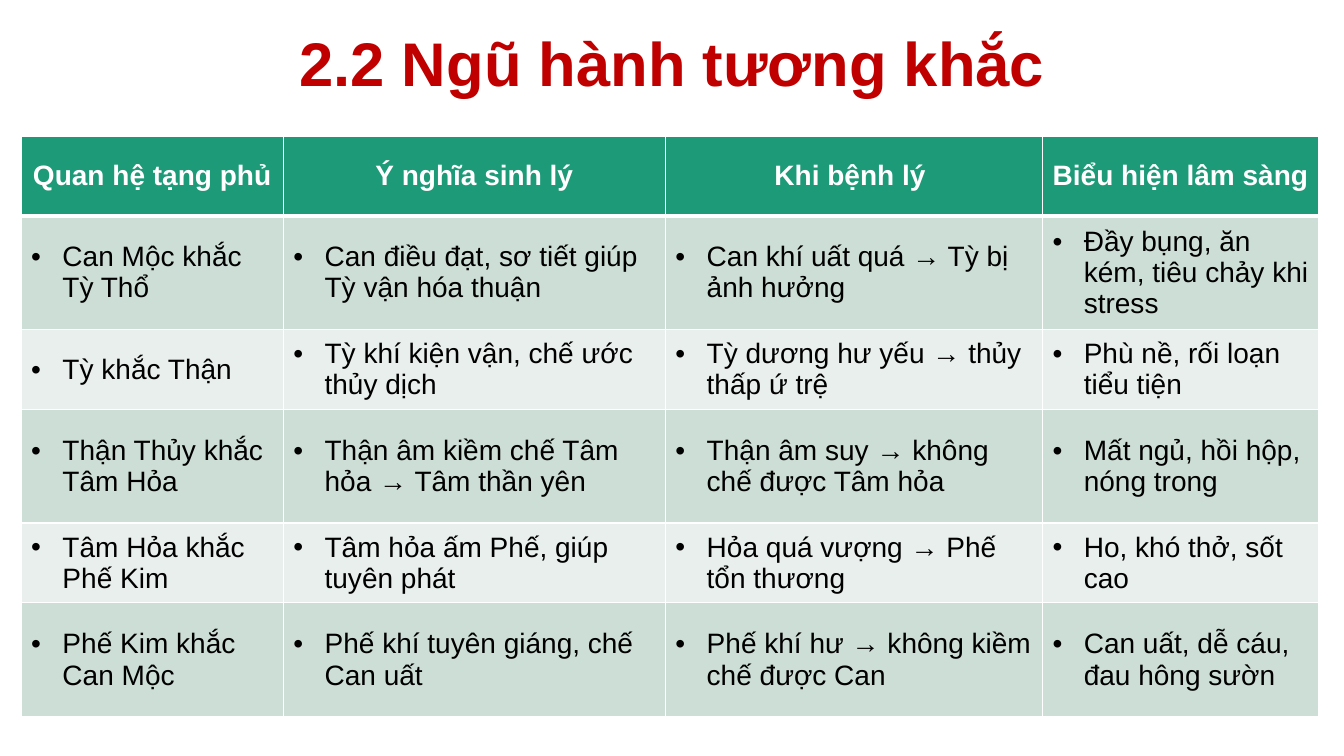
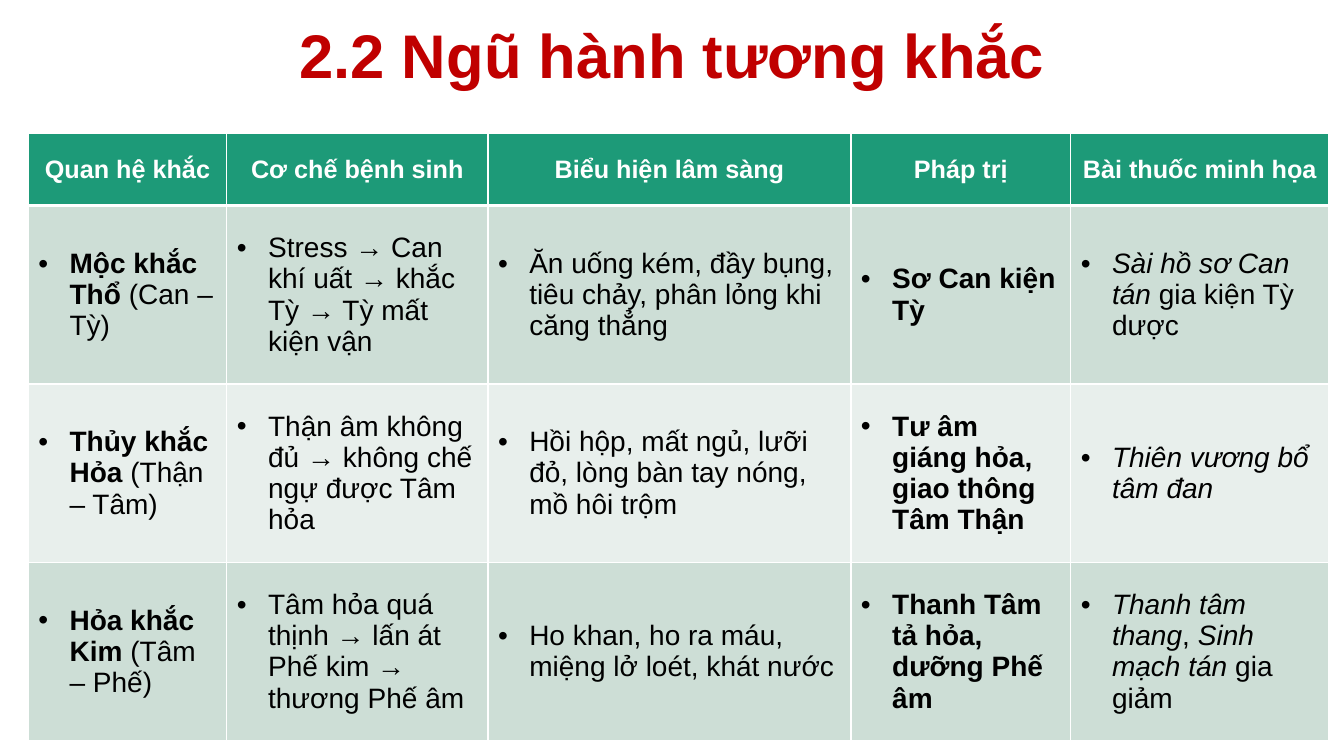
"""Builds two slides that tabulate the controlling cycle of the five elements."""
from lxml.etree import SubElement
from pptx import Presentation
from pptx.dml.color import RGBColor
from pptx.enum.text import MSO_ANCHOR as Anchor, MSO_AUTO_SIZE as AutoSize, PP_ALIGN as Align
from pptx.oxml.ns import qn
from pptx.util import Inches, Pt

RED = RGBColor(0xC0, 0x00, 0x00)
GREEN = RGBColor(0x1D, 0x9A, 0x78)
SAGE = RGBColor(0xCD, 0xDE, 0xD6)
MIST = RGBColor(0xE8, 0xEF, 0xEC)
WHITE = RGBColor(0xFF, 0xFF, 0xFF)
BLACK = RGBColor(0x00, 0x00, 0x00)

FONT = "Arial"
TITLE = "2.2 Ngũ hành tương khắc"
TITLE_SIZE = 44
BODY_SIZE = 20
BULLET_INDENT = Inches(0.31)


def bold(text):
    """Mark a piece of cell text as bold."""
    return text, True, False


def italic(text):
    """Mark a piece of cell text as italic."""
    return text, False, True


def plain(text):
    """Mark a piece of cell text as regular."""
    return text, False, False


ORGAN_HEADERS = ["Quan hệ tạng phủ", "Ý nghĩa sinh lý", "Khi bệnh lý ", "Biểu hiện lâm sàng"]
ORGAN_ROWS = [
    ["Can Mộc khắc Tỳ Thổ", "Can điều đạt, sơ tiết giúp Tỳ vận hóa thuận",
     "Can khí uất quá → Tỳ bị ảnh hưởng", "Đầy bụng, ăn kém, tiêu chảy khi stress"],
    ["Tỳ khắc Thận", "Tỳ khí kiện vận, chế ước thủy dịch",
     "Tỳ dương hư yếu → thủy thấp ứ trệ", "Phù nề, rối loạn tiểu tiện"],
    ["Thận Thủy khắc Tâm Hỏa", "Thận âm kiềm chế Tâm hỏa → Tâm thần yên",
     "Thận âm suy → không chế được Tâm hỏa", "Mất ngủ, hồi hộp, nóng trong"],
    ["Tâm Hỏa khắc Phế Kim", "Tâm hỏa ấm Phế, giúp tuyên phát",
     "Hỏa quá vượng → Phế tổn thương", "Ho, khó thở, sốt cao"],
    ["Phế Kim khắc Can Mộc", "Phế khí tuyên giáng, chế Can uất",
     "Phế khí hư → không kiềm chế được Can", "Can uất, dễ cáu, đau hông sườn"],
]

TREATMENT_HEADERS = ["Quan hệ khắc", "Cơ chế bệnh sinh", "Biểu hiện lâm sàng", "Pháp trị",
                     "Bài thuốc minh họa"]
TREATMENT_ROWS = [
    [[bold("Mộc khắc Thổ"), plain(" (Can – Tỳ)")],
     "Stress → Can khí uất → khắc Tỳ → Tỳ mất kiện vận",
     "Ăn uống kém, đầy bụng, tiêu chảy, phân lỏng khi căng thẳng",
     [bold("Sơ Can kiện Tỳ")],
     [italic("Sài hồ sơ Can tán"), plain(" gia kiện Tỳ dược")]],
    [[bold("Thủy khắc Hỏa"), plain(" (Thận – Tâm)")],
     "Thận âm không đủ → không chế ngự được Tâm hỏa",
     "Hồi hộp, mất ngủ, lưỡi đỏ, lòng bàn tay nóng, mồ hôi trộm",
     [bold("Tư âm giáng hỏa, giao thông Tâm Thận")],
     [italic("Thiên vương bổ tâm đan")]],
    [[bold("Hỏa khắc Kim"), plain(" (Tâm – Phế)")],
     "Tâm hỏa quá thịnh → lấn át Phế kim → thương Phế âm",
     "Ho khan, ho ra máu, miệng lở loét, khát nước",
     [bold("Thanh Tâm tả hỏa, dưỡng Phế âm")],
     [italic("Thanh tâm thang"), plain(", "), italic("Sinh mạch tán "), plain("gia giảm")]],
]


def add_span(para, text, size, color, is_bold=False, is_italic=False):
    """Append one formatted run to a paragraph."""
    span = para.add_run()
    span.text = text
    font = span.font
    font.name, font.size = FONT, Pt(size)
    font.bold, font.italic = is_bold, is_italic
    font.color.rgb = color


def add_bullet(para):
    """Give a paragraph a hanging round bullet."""
    props = para._p.get_or_add_pPr()
    props.set("marL", str(BULLET_INDENT))
    props.set("indent", str(-BULLET_INDENT))
    SubElement(props, qn("a:buFont"), typeface=FONT)
    SubElement(props, qn("a:buChar"), char="•")


def style_cell(cell, fill, bottom=1, top=1):
    """Set a cell's white borders, fill and vertical centring."""
    props = cell._tc.get_or_add_tcPr()
    for side, width in (("L", 1), ("R", 1), ("T", top), ("B", bottom)):
        line = SubElement(props, qn(f"a:ln{side}"), w=str(Pt(width)))
        paint = SubElement(line, qn("a:solidFill"))
        SubElement(paint, qn("a:srgbClr"), val=str(WHITE))
    cell.fill.solid()
    cell.fill.fore_color.rgb = fill
    cell.vertical_anchor = Anchor.MIDDLE


def fill_header(cell, text, size):
    """Write a centred column heading."""
    style_cell(cell, GREEN, bottom=3)
    para = cell.text_frame.paragraphs[0]
    para.alignment = Align.CENTER
    add_span(para, text, size, WHITE, is_bold=True)


def fill_body(cell, content, row_number):
    """Write a bulleted cell in the colour of its band."""
    style_cell(cell, SAGE if row_number % 2 else MIST, top=3 if row_number == 1 else 1)
    para = cell.text_frame.paragraphs[0]
    add_bullet(para)
    for text, is_bold, is_italic in [plain(content)] if isinstance(content, str) else content:
        add_span(para, text, BODY_SIZE, BLACK, is_bold, is_italic)


def add_title(page, top, height):
    """Place the red slide title in the title placeholder."""
    box = page.shapes.title
    box.left, box.top = Inches(0.92), Inches(top)
    box.width, box.height = Inches(11.5), Inches(height)
    frame = box.text_frame
    frame.auto_size = AutoSize.NONE
    frame.vertical_anchor = Anchor.MIDDLE
    para = frame.paragraphs[0]
    para.alignment = Align.CENTER
    para.line_spacing = 0.9
    add_span(para, TITLE, TITLE_SIZE, RED, is_bold=True)


def add_grid(page, left, top, columns, heights, headers, rows, header_size):
    """Place a banded table with the given column widths and row heights."""
    table = page.shapes.add_table(
        len(heights), len(columns), Inches(left), Inches(top),
        Inches(sum(columns)), Inches(sum(heights))).table
    for column, width in zip(table.columns, columns):
        column.width = Inches(width)
    for row, height in zip(table.rows, heights):
        row.height = Inches(height)
    for index, text in enumerate(headers):
        fill_header(table.cell(0, index), text, header_size)
    for number, contents in enumerate(rows, start=1):
        for index, content in enumerate(contents):
            fill_body(table.cell(number, index), content, number)


def add_page(deck, title_box, **grid):
    """Add one slide made of a title and a table."""
    page = deck.slides.add_slide(deck.slide_layouts[5])
    add_title(page, *title_box)
    add_grid(page, **grid)


def main():
    """Build and save the deck."""
    deck = Presentation()
    deck.slide_width, deck.slide_height = Inches(13.33), Inches(7.5)
    add_page(deck, (0.1, 1.12), left=0.21, top=1.35, columns=[2.6, 3.79, 3.74, 2.74],
             heights=[0.79, 1.13, 0.79, 1.13, 0.79, 1.13],
             headers=ORGAN_HEADERS, rows=ORGAN_ROWS, header_size=20)
    add_page(deck, (0.15, 0.87), left=0.28, top=1.32, columns=[1.97, 2.59, 3.6, 2.18, 2.56],
             heights=[0.72] + [1.77] * 3,
             headers=TREATMENT_HEADERS, rows=TREATMENT_ROWS, header_size=18)
    deck.save("out.pptx")


if __name__ == "__main__":
    main()
